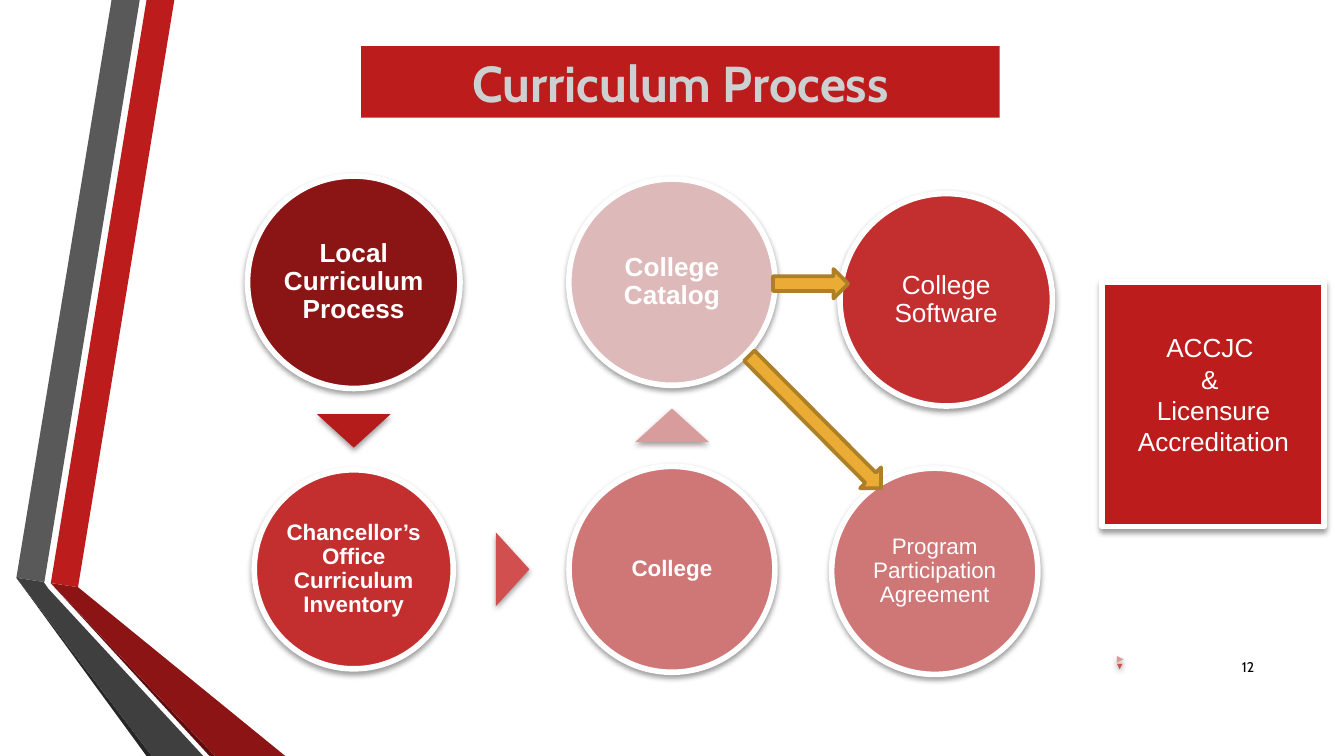
from lxml import etree
from pptx import Presentation
from pptx.dml.color import RGBColor
from pptx.enum import shapes, text
from pptx.oxml import ns
from pptx.util import Pt

WHITE = RGBColor(0xFF, 0xFF, 0xFF)
BLACK = RGBColor(0x00, 0x00, 0x00)
SILVER = RGBColor(0xCD, 0xD0, 0xD1)
RED = RGBColor(0xBC, 0x1C, 0x1C)
ARROW_RED = RGBColor(0xB4, 0x1B, 0x1B)
MAROON = RGBColor(0x8B, 0x15, 0x15)
FOLD_RED = RGBColor(0x8D, 0x14, 0x15)
DEEP_RED = RGBColor(0x5E, 0x0D, 0x0E)
CRIMSON = RGBColor(0xC3, 0x2F, 0x2F)
CORAL = RGBColor(0xD2, 0x4F, 0x4F)
ROSE = RGBColor(0xCF, 0x76, 0x76)
PINK = RGBColor(0xD9, 0x9C, 0x9C)
BLUSH = RGBColor(0xDD, 0xB9, 0xB9)
GOLD = RGBColor(0xEA, 0xAC, 0x35)
BRONZE = RGBColor(0xAD, 0x7F, 0x27)
GRAY = RGBColor(0x59, 0x59, 0x59)
FOLD_GRAY = RGBColor(0x3F, 0x3F, 0x3F)
DARK_GRAY = RGBColor(0x26, 0x26, 0x26)

CENTER, RIGHT = text.PP_ALIGN.CENTER, text.PP_ALIGN.RIGHT
SHAPE = shapes.MSO_SHAPE


def write(tf, content, size=14, font="Arial", color=WHITE, bold=False,
          align=CENTER, anchor=text.MSO_ANCHOR.MIDDLE, spacing=None, inset=None):
    """Fill a text frame, one paragraph per line of content."""
    tf.word_wrap = True
    tf.vertical_anchor = anchor
    if inset is not None:
        tf.margin_left = tf.margin_right = Pt(inset)
        tf.margin_top = tf.margin_bottom = Pt(inset)
    for i, line in enumerate(content.split("\n")):
        p = tf.add_paragraph() if i else tf.paragraphs[0]
        p.alignment = align
        if spacing:
            p.line_spacing = spacing
        r = p.add_run()
        r.text = line
        r.font.size, r.font.name, r.font.bold = Pt(size), font, bold
        r.font.color.rgb = color


class Board:
    """Style and current slide; shapes are placed by their centre."""

    def __init__(self, s):
        self.s = s

    def paint(self, sp, fill, line=None, width=3, shadow=False):
        sp.shadow.inherit = False
        sp.fill.solid()
        sp.fill.fore_color.rgb = fill
        if line is None:
            sp.line.fill.background()
        else:
            sp.line.color.rgb = line
            sp.line.width = Pt(width)
        if shadow:
            effects = sp._element.spPr.find(ns.qn("a:effectLst"))
            outer = etree.SubElement(effects, ns.qn("a:outerShdw"), blurRad=str(Pt(3.1)),
                                     dist=str(Pt(1.6)), dir="5400000", rotWithShape="0")
            tint = etree.SubElement(outer, ns.qn("a:srgbClr"), val="000000")
            etree.SubElement(tint, ns.qn("a:alpha"), val="38000")

    def shape(self, kind, cx, cy, w, h, fill, rot=0, **look):
        sp = self.s.shapes.add_shape(kind, Pt(cx - w / 2), Pt(cy - h / 2), Pt(w), Pt(h))
        sp.rotation = rot
        self.paint(sp, fill, **look)
        return sp

    def circle(self, content, cx, cy, d, fill, **fmt):
        sp = self.shape(SHAPE.OVAL, cx, cy, d, d, fill, line=WHITE, shadow=True)
        write(sp.text_frame, content, spacing=0.9, inset=1.4, **fmt)

    def pointer(self, cx, cy, fill, rot=0, w=39.6, h=18):
        self.shape(SHAPE.ISOSCELES_TRIANGLE, cx, cy, w, h, fill, rot, shadow=True)

    def arrow(self, cx, cy, length, rot=0):
        self.shape(SHAPE.RIGHT_ARROW, cx, cy, length, 15.8, GOLD, rot, line=BRONZE, width=2)

    def ribbon(self, fill, points):
        points = [(Pt(x), Pt(y)) for x, y in points]
        fb = self.s.shapes.build_freeform(*points[0])
        fb.add_line_segments(points[1:], close=True)
        self.paint(fb.convert_to_shape(), fill)

    def label(self, content, x, y, w, h, **fmt):
        sp = self.s.shapes.add_textbox(Pt(x), Pt(y), Pt(w), Pt(h))
        write(sp.text_frame, content, **fmt)


prs = Presentation()
prs.slide_width, prs.slide_height = Pt(720), Pt(405)
board = Board(prs.slides.add_slide(prs.slide_layouts[6]))

# Folded ribbons on the left edge
board.ribbon(RED, [(27.2, 312.4), (41.8, 314.6), (93.4, 0), (78.5, 0)])
board.ribbon(GRAY, [(74.9, 0), (59.8, 0), (8.8, 309.6), (23.8, 311.8)])
board.ribbon(DARK_GRAY, [(8.8, 309.6), (78.5, 405), (81.4, 405)])
board.ribbon(DEEP_RED, [(27.2, 312.4), (112.3, 405), (115.2, 405)])
board.ribbon(FOLD_RED, [(27.2, 312.4), (115.2, 405), (152.8, 405), (41.8, 314.6)])
board.ribbon(FOLD_GRAY, [(108.9, 405), (25.9, 315.4), (23.4, 311.8), (8.8, 309.6), (81.4, 405)])

# Slide number
board.label("12", 646.6, 346.3, 32.4, 21.6, size=7.5, font="Cabin", color=BLACK, align=RIGHT)

# Process steps
LEFT, MIDDLE, TOP, BOTTOM = 189.5, 360, 151.2, 305
board.circle("Local Curriculum Process", LEFT, TOP, 113.8, MAROON, bold=True)
board.circle("Chancellor’s Office Curriculum Inventory", LEFT, BOTTOM, 106.6, CRIMSON,
             size=12, bold=True)
board.circle("College", MIDDLE, BOTTOM, 110.3, ROSE, size=12, bold=True)
board.circle("College Catalog", MIDDLE, TOP, 110.5, BLUSH, bold=True)
board.circle("Program Participation Agreement", 500.8, 306.1, 110.5, ROSE, size=12)
board.circle("College Software", 506.9, 160.6, 113.8, CRIMSON)

# Pointers between the steps
board.pointer(LEFT, 230.8, ARROW_RED, rot=180)
board.pointer(274.6, BOTTOM, CORAL, rot=90)
board.pointer(MIDDLE, 227.9, PINK)
board.pointer(600.1, 353.2, PINK, rot=90, w=3.6, h=3.6)
board.pointer(599.8, 357.1, CORAL, rot=182.4, w=2.9, h=2.9)

# Title
title = board.shape(SHAPE.RECTANGLE, 364.5, 43.9, 342, 38.2, RED)
write(title.text_frame, "Curriculum Process", size=27, font="Cabin", color=SILVER, bold=True)

# Arrows from the catalog
board.arrow(434.3, 152, 40.3)
board.arrow(436.7, 226.1, 100.1, rot=45.2)

# Accreditation panel
board.shape(SHAPE.RECTANGLE, 649.8, 216.7, 118.8, 131, RED, line=WHITE, shadow=True)
board.label("ACCJC \n& \nLicensure Accreditation", 598.3, 174.2, 103.7, 74.9,
            anchor=text.MSO_ANCHOR.TOP)

prs.save("out.pptx")
